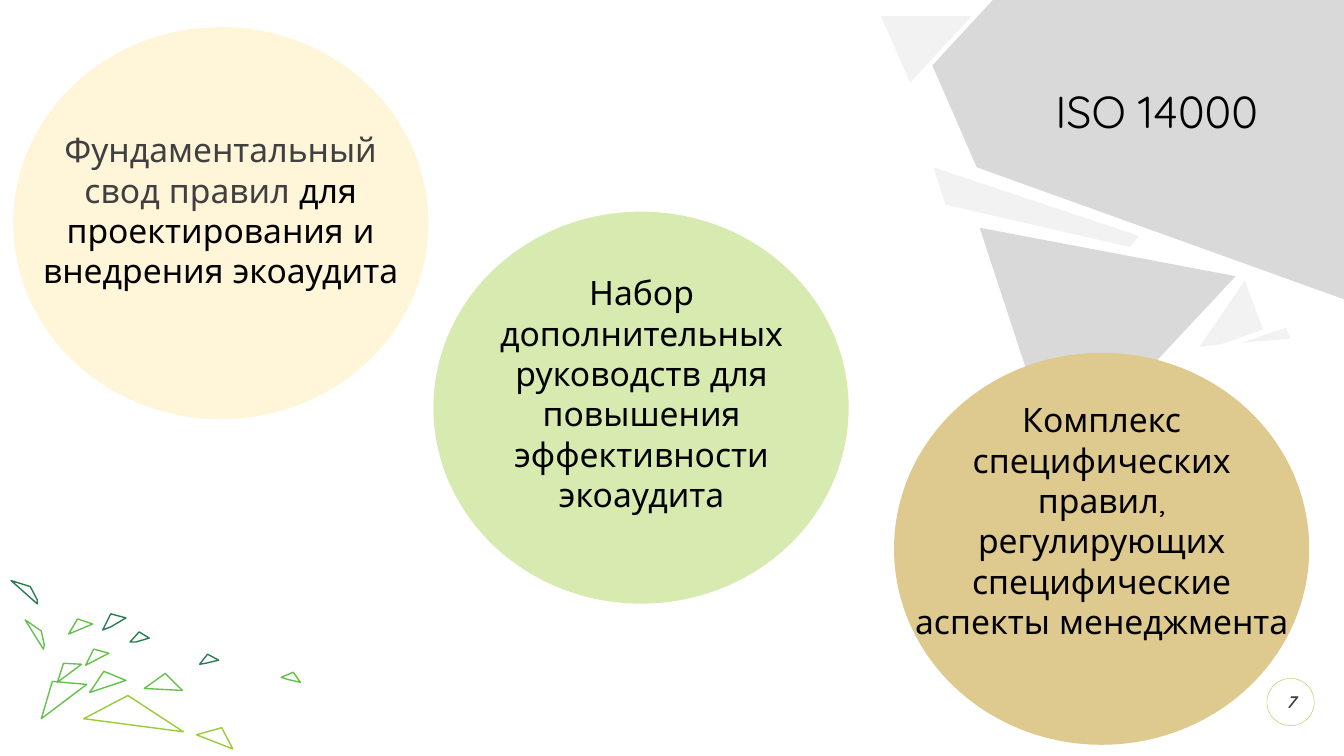
from dataclasses import dataclass

from pptx import Presentation
from pptx.dml.color import RGBColor
from pptx.enum import shapes, text
from pptx.util import Pt


@dataclass(frozen=True)
class Theme:
    """Hold the colours, font and type sizes of the slide."""
    font: str = "Quicksand"
    ink: str = "000000"
    soft: str = "404040"
    pale: str = "F2F2F2"
    grey: str = "D9D9D9"
    cream: str = "FFF5D9"
    mint: str = "D7EAB0"
    sand: str = "DEC98E"
    leaf: str = "64C24A"
    pine: str = "297D53"
    lime: str = "9ACB39"
    head: int = 32
    body: int = 24
    page: int = 12


T = Theme()
DISC = (296.6, 280)

SHARDS = [
    (T.pale, [(629.3, 11.5), (694.1, 11.5), (650.2, 59)]),
    (T.grey, [(709.2, 0), (960, 0), (960, 213.8), (697.7, 119.5), (666, 46.8)]),
    (T.grey, [(699.8, 162.7), (882.7, 197.3), (789.1, 297.4), (735.8, 272.2)]),
    (T.pale, [(666.7, 119.5), (813.6, 168.5), (807.1, 176.4), (675.4, 146.2)]),
    (T.pale, [(918.7, 234), (921.6, 241.9), (887, 244.8)]),
    (T.pale, [(889.2, 200.2), (902.2, 235.4), (871.2, 246.2), (856.8, 247.7)]),
]

CHIPS = [
    (T.leaf, [(37.4, 486.7), (61.9, 488.9), (29.5, 513.4)]),
    (T.leaf, [(74.2, 479.5), (90, 486), (64.1, 494.6)]),
    (T.leaf, [(45.4, 473.8), (58.3, 474.5), (41, 487.4)]),
    (T.leaf, [(67, 463.7), (77.8, 466.6), (61.2, 475.2)]),
    (T.leaf, [(18, 442.8), (29.5, 450.7), (31.7, 460.8), (31, 463.7)]),
    (T.pine, [(99.4, 451.4), (106.6, 455.8), (97.2, 458.6), (92.9, 458.6)]),
    (T.pine, [(7.9, 414.7), (21.6, 419), (26.6, 428.4), (26.6, 431.3)]),
    (T.leaf, [(55.4, 442.1), (66.2, 445.7), (49, 452.9)]),
    (T.pine, [(79.2, 438.5), (90, 441.4), (79.2, 447.8), (73.4, 450)]),
    (T.lime, [(91.4, 496.8), (131, 522.7), (59.8, 513.4)]),
    (T.leaf, [(118.1, 481), (130.3, 493.2), (103, 491.8)]),
    (T.pine, [(148.3, 467.3), (156.2, 471.6), (146.9, 473.8), (142.6, 474.5)]),
    (T.lime, [(158.4, 519.8), (166.3, 535), (140.4, 524.9)]),
    (T.leaf, [(209.5, 480.2), (214.6, 487.4), (205.2, 485.3), (200.9, 483.8)]),
]

TOPICS = [
    (T.cream, (9.4, 19.4), (19.4, 92.2, 276.5, 118),
     [("Фундаментальный свод правил ", T.soft),
      ("для проектирования и внедрения экоаудита", T.ink)]),
    (T.mint, (309.6, 151.2), (341.3, 194.4, 234, 139),
     [("Набор дополнительных руководств для повышения "
       "эффективности экоаудита", T.ink)]),
    (T.sand, (638.6, 252), (651.6, 285.1, 270.7, 97.2),
     [("Комплекс специфических правил, регулирующих "
       "специфические аспекты менеджмента", T.ink)]),
]


def paint(shape, fill=None, line=None, width=1):
    """Set fill and outline, leaving out whichever is not given."""
    shape.shadow.inherit = False
    if fill:
        shape.fill.solid()
        shape.fill.fore_color.rgb = RGBColor.from_string(fill)
    else:
        shape.fill.background()
    if line:
        shape.line.color.rgb = RGBColor.from_string(line)
        shape.line.width = Pt(width)
    else:
        shape.line.fill.background()


def poly(slide, dots, **look):
    """Draw a closed outline through points."""
    first, *rest = [(Pt(x), Pt(y)) for x, y in dots]
    pen = slide.shapes.build_freeform(*first)
    pen.add_line_segments(rest, close=True)
    paint(pen.convert_to_shape(), **look)


def oval(slide, box, **look):
    """Draw an ellipse in a box and return it."""
    kind = shapes.MSO_SHAPE.OVAL
    shape = slide.shapes.add_shape(kind, *map(Pt, box))
    paint(shape, **look)
    return shape


def write(frame, runs, size, align=text.PP_ALIGN.CENTER, bold=False, slant=False):
    """Write one paragraph, run by run."""
    frame.word_wrap = True
    para = frame.paragraphs[0]
    para.alignment = align
    for words, hue in runs:
        run = para.add_run()
        run.text = words
        font = run.font
        font.name, font.size = T.font, Pt(size)
        font.bold, font.italic = bold, slant
        font.color.rgb = RGBColor.from_string(hue)


def trim(frame):
    """Remove the inner margins of a text frame."""
    frame.margin_left = frame.margin_right = 0
    frame.margin_top = frame.margin_bottom = 0


def topic(slide, hue, spot, box, runs):
    """Draw a coloured disc with its text."""
    oval(slide, (*spot, *DISC), fill=hue)
    frame = slide.shapes.add_textbox(*map(Pt, box)).text_frame
    trim(frame)
    write(frame, runs, T.body)


def badge(slide, label):
    """Draw the ringed page number."""
    ring = oval(slide, (905, 484.6, 33.8, 33.8), line=T.lime, width=0.25)
    frame = ring.text_frame
    trim(frame)
    frame.vertical_anchor = text.MSO_ANCHOR.MIDDLE
    write(frame, [(label, T.soft)], T.page, bold=True, slant=True)


def heading(slide, words):
    """Place the title in front of the shards."""
    title = slide.shapes.title
    title.left, title.top, title.width, title.height = map(
        Pt, (746.6, 56.2, 175.7, 46.1))
    frame = title.text_frame
    frame.auto_size = text.MSO_AUTO_SIZE.NONE
    frame.vertical_anchor = text.MSO_ANCHOR.TOP
    write(frame, [(words, T.ink)], T.head, text.PP_ALIGN.LEFT)
    title.element.getparent().append(title.element)


def main():
    """Build and save the slide."""
    deck = Presentation()
    deck.slide_width, deck.slide_height = Pt(960), Pt(540)
    slide = deck.slides.add_slide(deck.slide_layouts[5])
    for hue, dots in SHARDS:
        poly(slide, dots, fill=hue)
    badge(slide, "7")
    for item in TOPICS:
        topic(slide, *item)
    heading(slide, "ISO 14000")
    for hue, dots in CHIPS:
        poly(slide, dots, line=hue)
    deck.save("out.pptx")


if __name__ == "__main__":
    main()
